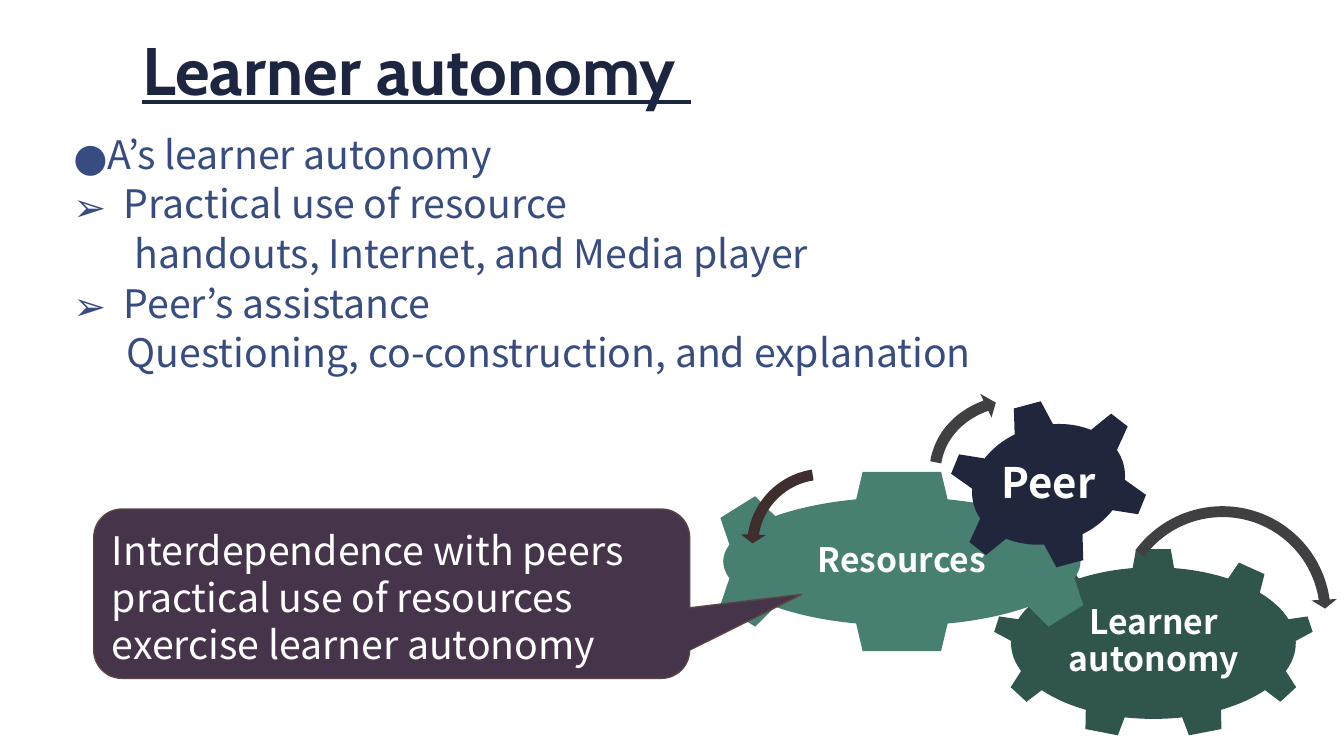
from dataclasses import dataclass

from lxml import etree
from pptx import Presentation
from pptx.dml.color import RGBColor
from pptx.enum.shapes import MSO_SHAPE
from pptx.enum.text import MSO_ANCHOR, MSO_AUTO_SIZE, PP_ALIGN
from pptx.oxml.ns import qn
from pptx.util import Pt

GEAR6 = MSO_SHAPE.GEAR_6
GEAR9 = MSO_SHAPE.GEAR_9
ARC = MSO_SHAPE.CIRCULAR_ARROW
LEFT_ARC = MSO_SHAPE.LEFT_CIRCULAR_ARROW
CALLOUT = MSO_SHAPE.ROUNDED_RECTANGULAR_CALLOUT
TOP, MIDDLE, BOTTOM = MSO_ANCHOR.TOP, MSO_ANCHOR.MIDDLE, MSO_ANCHOR.BOTTOM
LEFT, CENTER = PP_ALIGN.LEFT, PP_ALIGN.CENTER
NO_FIT = MSO_AUTO_SIZE.NONE
SCALE = 9144


@dataclass(frozen=True)
class Theme:
    head: str = "Cabin"
    body: str = "Noto Sans CJK JP"
    mark: str = "Noto Sans Symbols"
    title: str = "1C2640"
    text: str = "374C81"
    white: str = "FFFFFF"
    green: str = "2F554C"
    teal: str = "477F71"
    navy: str = "20273C"
    gray: str = "404042"
    brown: str = "3F2E2E"
    plum: str = "46354A"
    edge: str = "5D4444"
    big: int = 48
    main: int = 28
    peer: int = 30
    label: int = 24


def px(n):
    return round(n * SCALE)


def box(at):
    return [px(n) for n in at]


class Deck:
    def __init__(self, theme):
        self.theme = theme
        self.file = Presentation()
        self.file.slide_width, self.file.slide_height = px(1333), px(750)
        self.slide = self.file.slides.add_slide(self.file.slide_layouts[5])

    def frame(self, shape, pads, anchor):
        frame = shape.text_frame
        frame.word_wrap = True
        frame.auto_size = NO_FIT
        frame.vertical_anchor = anchor
        (frame.margin_left, frame.margin_top,
         frame.margin_right, frame.margin_bottom) = box(pads)
        return frame

    def style(self, para, size, color, align=LEFT, line=None, face=None, bold=False):
        para.alignment = align
        if line:
            para.line_spacing = line
        for run in para.runs:
            font = run.font
            font.name = face or self.theme.body
            font.size = Pt(size)
            font.bold = bold
            font.color.rgb = RGBColor.from_string(color)

    def title(self, text, at):
        shape = self.slide.shapes.title
        shape.left, shape.top, shape.width, shape.height = box(at)
        frame = self.frame(shape, (13, 7, 13, 7), BOTTOM)
        frame.text = text
        para = frame.paragraphs[0]
        self.style(para, self.theme.big, self.theme.title, line=0.85,
                   face=self.theme.head, bold=True)
        para.runs[0].font.underline = True

    def list(self, rows, at):
        shape = self.slide.shapes.add_textbox(*box(at))
        frame = self.frame(shape, (10, 5, 10, 5), TOP)
        frame.text = "\n".join(text for text, _, _ in rows)
        for i, (para, (_, left, mark)) in enumerate(zip(frame.paragraphs, rows)):
            props = para._p.get_or_add_pPr()
            props.set("marL", str(px(left)))
            if mark:
                props.set("indent", str(-px(left)))
                font = etree.SubElement(props, qn("a:buFont"))
                font.set("typeface", self.theme.mark)
                etree.SubElement(props, qn("a:buChar")).set("char", mark)
            self.style(para, self.theme.main, self.theme.text, line=Pt(21.5))
            if i:
                para.space_before = Pt(14)

    def shape(self, kind, at, fill, turn=0, tweaks=(), edge=None):
        shape = self.slide.shapes.add_shape(kind, *box(at))
        shape.shadow.inherit = False
        shape.rotation = turn
        for i, value in enumerate(tweaks):
            shape.adjustments[i] = value
        shape.fill.solid()
        shape.fill.fore_color.rgb = RGBColor.from_string(fill)
        if edge:
            shape.line.color.rgb = RGBColor.from_string(edge)
            shape.line.width = Pt(1)
        else:
            shape.line.fill.background()
        return shape

    def label(self, text, at, size):
        shape = self.slide.shapes.add_textbox(*box(at))
        frame = self.frame(shape, (3, 3, 3, 3), MIDDLE)
        frame.text = text
        self.style(frame.paragraphs[0], size, self.theme.white, CENTER,
                   Pt(size + 2), bold=True)

    def callout(self, text, at, tweaks):
        shape = self.shape(CALLOUT, at, self.theme.plum, 0, tweaks, self.theme.edge)
        frame = self.frame(shape, (10, 9, 10, 5), TOP)
        frame.text = text
        for para in frame.paragraphs:
            self.style(para, self.theme.main, self.theme.white, line=Pt(33.5))


def main():
    theme = Theme()
    deck = Deck(theme)
    deck.title("Learner autonomy ", (128, 13, 1111, 102))
    deck.list([
        ("A’s learner autonomy", 33, "●"),
        ("Practical use of resource", 50, "➢"),
        ("handouts, Internet, and Media player", 61, None),
        ("Peer’s assistance", 50, "➢"),
        ("Questioning, co-construction, and explanation", 53, None),
    ], (63, 141, 1198, 526))

    gears = [
        (GEAR9, (984, 544, 320, 188), theme.green, 0,
         "Learner autonomy", (1039, 588, 211, 97), theme.label),
        (GEAR6, (690, 466, 409, 182), theme.teal, 0,
         "Resources", (769, 512, 251, 90), theme.label),
        (GEAR6, (938, 397, 204, 167), theme.navy, 345,
         "Peer", (985, 432, 110, 98), theme.peer),
    ]
    for kind, at, fill, turn, text, spot, size in gears:
        deck.shape(kind, at, fill, turn)
        deck.label(text, spot, size)

    arcs = [
        (ARC, (1098, 495, 229, 229), theme.gray, 310.5,
         (0.047, 2.99, 24.775, 159.473, 0.055)),
        (LEFT_ARC, (734, 458, 166, 166), theme.brown, 13.8,
         (0.065, 4.3, 104.891, 148.378, 0.075)),
        (ARC, (913, 385, 224, 186), theme.gray, 16.1,
         (0.06, 3.941, 133.138, 105.082, 0.07)),
    ]
    for arc in arcs:
        deck.shape(*arc)

    deck.callout("Interdependence with peers\npractical use of resources\n"
                 "exercise learner autonomy",
                 (93, 505, 591, 168), (0.688, 0.004, 0.167))
    deck.file.save("out.pptx")


if __name__ == "__main__":
    main()
